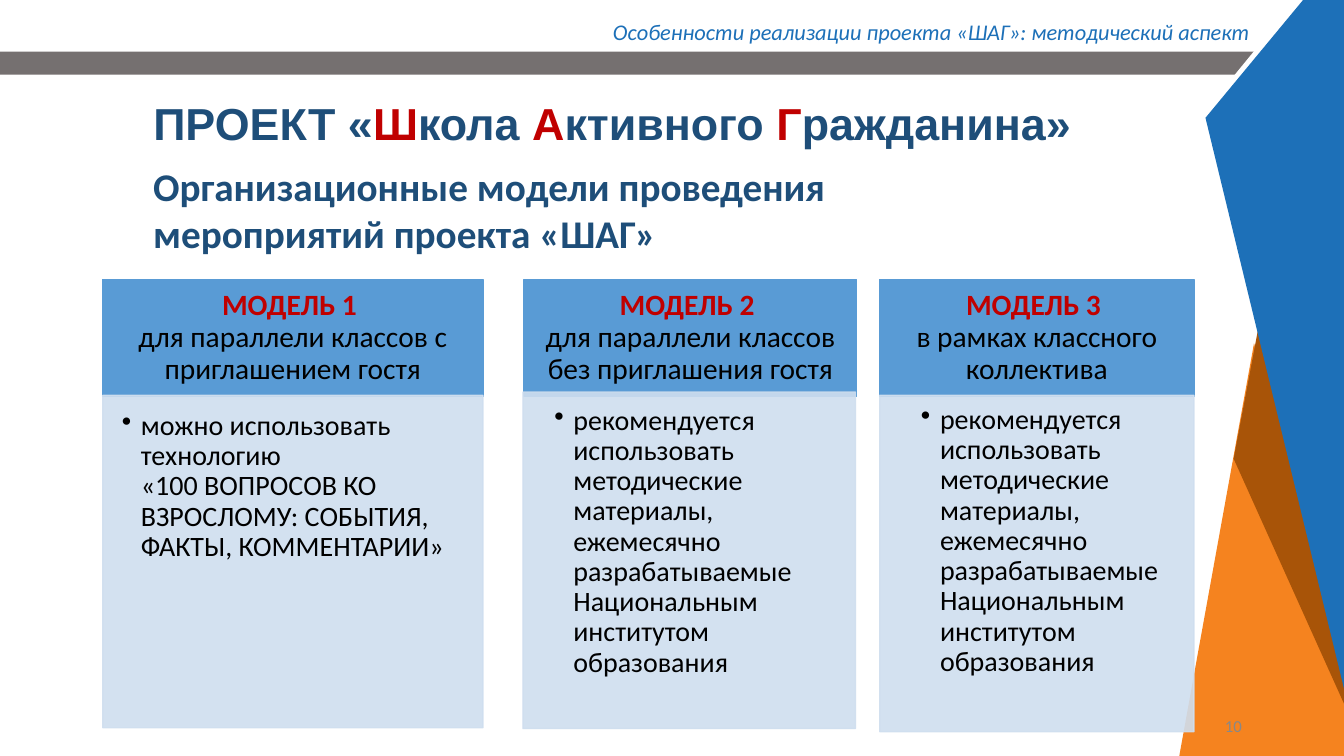
from lxml.etree import SubElement as Sub
from pptx import Presentation
from pptx.dml.color import RGBColor as RGB
from pptx.enum.shapes import MSO_SHAPE as Kind
from pptx.enum.text import MSO_ANCHOR as Anchor, MSO_AUTO_SIZE as Fit, PP_ALIGN as Align
from pptx.oxml.ns import qn
from pptx.util import Cm, Pt

GREY = RGB(0x75, 0x70, 0x70)
ORANGE = RGB(0xF5, 0x83, 0x1F)
BROWN = RGB(0xA8, 0x54, 0x08)
BLUE = RGB(0x1D, 0x70, 0xB8)
NAVY = RGB(0x1E, 0x4E, 0x79)
RED = RGB(0xC0, 0x00, 0x00)
SKY = RGB(0x59, 0x9B, 0xD5)
PALE = RGB(0xCF, 0xDE, 0xEF)
FAINT = RGB(0x88, 0x88, 0x88)
WHITE = RGB(0xFF, 0xFF, 0xFF)
BLACK = RGB(0x00, 0x00, 0x00)


def paint(shape, color, edge=False):
    shape.shadow.inherit = False
    shape.fill.solid()
    shape.fill.fore_color.rgb = color
    if edge:
        shape.line.color.rgb = color
        shape.line.width = Pt(1)
    else:
        shape.line.fill.background()


def write(shape, parts, form, frame=None, para=None):
    """Fill one paragraph with (text, colour, extra font values) parts; "\\n" breaks the line."""
    text = shape.text_frame
    text.word_wrap = True
    text.auto_size = Fit.NONE
    for key, val in (frame or {}).items():
        setattr(text, key, val)
    line = text.paragraphs[0]
    for key, val in (para or {}).items():
        setattr(line, key, val)
    for words, color, extra in parts:
        for i, piece in enumerate(words.split("\n")):
            if i:
                line.add_line_break()
            if piece:
                run = line.add_run()
                run.text = piece
                run.font.color.rgb = color
                for key, val in {**form, **extra}.items():
                    setattr(run.font, key, val)
    return line


deck = Presentation()
deck.slide_width, deck.slide_height = Cm(33.87), Cm(19.05)
slide = deck.slides.add_slide(deck.slide_layouts[5])
shapes = slide.shapes

# Grey bar and the coloured facets on the right
facets = [
    (GREY, [(0, 1.3), (32.92, 1.3), (32.26, 1.88), (0, 1.88)]),
    (ORANGE, [(33.17, 0), (33.87, 0), (33.87, 19.05), (29.72, 19.05)]),
    (WHITE, [(32.66, 0), (33.87, 0), (33.87, 17.98), (30.23, 2.97)]),
    (ORANGE, [(32.92, 15.52), (33.87, 15.52), (33.87, 19.05), (32.92, 19.05)]),
    (BROWN, [(31.09, 11.56), (32.03, 6.58), (33.87, 15.16), (33.87, 17.73)]),
    (BLUE, [(32.84, 0), (33.87, 0), (33.87, 17.35), (30.38, 2.97)]),
]
for color, points in facets:
    first, *rest = [(Cm(x), Cm(y)) for x, y in points]
    pen = shapes.build_freeform(*first)
    pen.add_line_segments(rest, close=True)
    paint(pen.convert_to_shape(), color)

# Running head, title, subtitle and page number
head = shapes.add_textbox(Cm(3.94), Cm(0.33), Cm(27.81), Cm(0.94))
write(head, [("Особенности реализации проекта «ШАГ»: методический аспект", BLUE, {})],
      {"name": "Calibri", "size": Pt(16), "italic": True}, para={"alignment": Align.RIGHT})

title = shapes.title
title.left, title.top, title.width, title.height = Cm(3.61), Cm(1.88), Cm(26.54), Cm(2.59)
words = [("ПРОЕКТ «", NAVY), ("Ш", RED), ("кола ", NAVY), ("А", RED),
         ("ктивного ", NAVY), ("Г", RED), ("ражданина»", NAVY)]
write(title, [(word, color, {}) for word, color in words],
      {"name": "Arial", "size": Pt(32), "bold": True},
      {"vertical_anchor": Anchor.MIDDLE}, {"alignment": Align.LEFT, "line_spacing": 0.9})

sub = shapes.add_textbox(Cm(3.61), Cm(3.96), Cm(21.97), Cm(1.27))
write(sub, [("Организационные модели проведения мероприятий проекта «ШАГ»", NAVY, {})],
      {"name": "Calibri", "size": Pt(28), "bold": True})

page = shapes.add_textbox(Cm(23.93), Cm(17.78), Cm(7.62), Cm(1.02))
write(page, [("10", FAINT, {})], {"name": "Calibri", "size": Pt(12)},
      {"vertical_anchor": Anchor.MIDDLE}, {"alignment": Align.RIGHT})

# Three models: heading, panel, list
advice = ("рекомендуется использовать методические материалы, ежемесячно "
          "разрабатываемые Национальным институтом образования")
talk = ("можно использовать технологию \n"
        "«100 ВОПРОСОВ КО ВЗРОСЛОМУ: СОБЫТИЯ, ФАКТЫ, КОММЕНТАРИИ»")
models = [
    ("для параллели классов с приглашением гостя", talk,
     (2.59, 7.04, 9.58, 2.95), (2.59, 9.96, 9.58, 8.38), (2.82, 10.11, 9.35, 6.83)),
    ("для параллели классов без приглашения гостя", advice,
     (13.21, 7.04, 8.38, 2.95), (13.18, 9.88, 8.38, 8.48), (13.72, 9.98, 8.38, 8.48)),
    ("в рамках классного коллектива", advice,
     (22.17, 7.04, 7.92, 2.95), (22.17, 9.96, 7.92, 8.48), (22.96, 9.96, 7.14, 8.48)),
]
cap_frame = {"vertical_anchor": Anchor.MIDDLE, "margin_left": Cm(0.41), "margin_right": Cm(0.41),
             "margin_top": Cm(0.23), "margin_bottom": Cm(0.23)}
list_frame = {"margin_left": Cm(0.25), "margin_right": Cm(0.36),
              "margin_top": Cm(0.25), "margin_bottom": Cm(0.41)}

for num, (group, note, cap_box, panel_box, list_box) in enumerate(models, 1):
    cap = shapes.add_shape(Kind.RECTANGLE, *map(Cm, cap_box))
    paint(cap, SKY, edge=True)
    write(cap, [(f"МОДЕЛЬ {num} \n", RED, {"bold": True}), (group, BLACK, {})],
          {"name": "Calibri", "size": Pt(21)}, cap_frame,
          {"alignment": Align.CENTER, "line_spacing": 0.9})

    panel = shapes.add_shape(Kind.RECTANGLE, *map(Cm, panel_box))
    paint(panel, PALE, edge=True)
    for tint in panel._element.spPr.iter(qn("a:srgbClr")):
        Sub(tint, qn("a:alpha"), val="90000")

    body = shapes.add_textbox(*map(Cm, list_box))
    line = write(body, [(note, BLACK, {})], {"name": "Calibri", "size": Pt(20)},
                 list_frame, {"line_spacing": 0.9})
    props = line._p.get_or_add_pPr()
    props.set("marL", str(Cm(0.48)))
    props.set("indent", str(-Cm(0.48)))
    Sub(Sub(props, qn("a:buClr")), qn("a:srgbClr"), val=str(BLACK))
    Sub(props, qn("a:buChar"), char="•")

deck.save("out.pptx")
